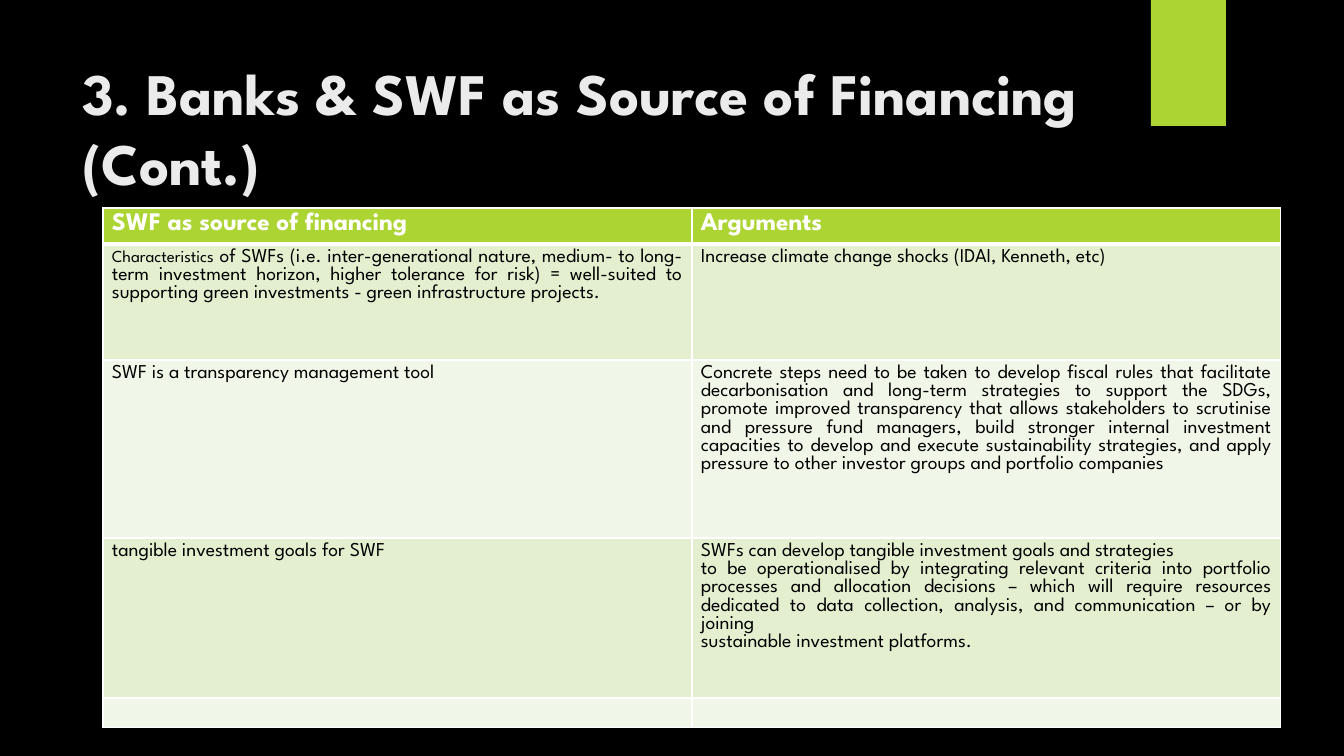
from pptx import Presentation
from pptx.dml.color import RGBColor
from pptx.enum.shapes import MSO_SHAPE
from pptx.enum.text import MSO_ANCHOR, PP_ALIGN
from pptx.oxml.ns import qn
from pptx.util import Pt
from lxml import etree

RECTANGLE = MSO_SHAPE.RECTANGLE
MIDDLE, TOP = MSO_ANCHOR.MIDDLE, MSO_ANCHOR.TOP
LEFT, JUSTIFY = PP_ALIGN.LEFT, PP_ALIGN.JUSTIFY

WIDTH, HEIGHT = 1344, 756
EMU_PER_PX = 12192000 / WIDTH
FONT = "League Spartan"
BLACK, WHITE, OFF_WHITE = "000000", "FFFFFF", "EBEBEB"
LIME, PALE_LIME, FAINT_LIME = "ACD433", "E3EFCE", "F1F7E8"

TITLE = "3. Banks & SWF as Source of Financing (Cont.)"
HEADINGS = ["SWF as source of financing", "Arguments"]
CHARACTERISTICS = [
    ("Characteristics", 12),
    (" of SWFs (i.e. inter-generational nature, medium- to long-term investment horizon, "
     "higher tolerance for risk) = well-suited to supporting green investments - "
     "green infrastructure projects.", 14),
]
ARGUMENTS = [
    [[CHARACTERISTICS], ["Increase climate change shocks (IDAI, Kenneth, etc)"]],
    [["SWF is a transparency management tool"],
     ["Concrete steps need to be taken to develop fiscal rules that facilitate decarbonisation "
      "and long-term strategies to support the SDGs, promote improved transparency that allows "
      "stakeholders to scrutinise and pressure fund managers, build stronger internal investment "
      "capacities to develop and execute sustainability strategies, and apply pressure to other "
      "investor groups and portfolio companies"]],
    [["tangible investment goals for SWF"],
     ["SWFs can develop tangible investment goals and strategies",
      "to be operationalised by integrating relevant criteria into portfolio processes and "
      "allocation decisions – which will require resources dedicated to data collection, "
      "analysis, and communication – or by joining",
      "sustainable investment platforms."]],
    [[], []],
]
ROW_HEIGHTS = [36, 116, 178, 160, 30]


def px(length):
    return round(length * EMU_PER_PX)


def rgb(color):
    return RGBColor.from_string(color)


def write(frame, paragraphs, size=14, color=BLACK, bold=False, align=LEFT):
    for index, content in enumerate(paragraphs):
        paragraph = frame.paragraphs[0] if index == 0 else frame.add_paragraph()
        paragraph.alignment = align
        pieces = [(content, size)] if isinstance(content, str) else content
        for words, points in pieces:
            run = paragraph.add_run()
            run.text = words
            run.font.name = FONT
            run.font.size = Pt(points)
            run.font.bold = bold
            run.font.color.rgb = rgb(color)
    if not paragraphs:
        ending = etree.SubElement(frame.paragraphs[0]._p, qn("a:endParaRPr"), sz=str(size * 100))
        etree.SubElement(ending, qn("a:latin"), typeface=FONT)


def place(part, left, top, width, height):
    part.left, part.top, part.width, part.height = map(px, (left, top, width, height))


def add_borders(cell, widths):
    properties = cell._tc.get_or_add_tcPr()
    for position, (side, points) in enumerate(widths.items()):
        line = etree.Element(qn(f"a:ln{side}"), w=str(Pt(points)))
        fill = etree.SubElement(line, qn("a:solidFill"))
        etree.SubElement(fill, qn("a:srgbClr"), val=WHITE)
        properties.insert(position, line)


def format_cell(cell, color, top_border=1, bottom_border=1):
    cell.fill.solid()
    cell.fill.fore_color.rgb = rgb(color)
    cell.vertical_anchor = TOP
    cell.margin_left = cell.margin_right = px(9)
    cell.margin_top = cell.margin_bottom = px(5)
    add_borders(cell, {"L": 1, "R": 1, "T": top_border, "B": bottom_border})


def add_accent(slide, left, top, width, height):
    accent = slide.shapes.add_shape(RECTANGLE, *map(px, (left, top, width, height)))
    accent.shadow.inherit = False
    accent.fill.solid()
    accent.fill.fore_color.rgb = rgb(LIME)
    accent.line.fill.background()


def add_title(slide, left, top, width, height):
    title = slide.shapes.title
    place(title, left, top, width, height)
    title.text_frame.word_wrap = True
    title.text_frame.vertical_anchor = MIDDLE
    write(title.text_frame, [TITLE], size=42, color=OFF_WHITE, bold=True)


def add_arguments(slide, left, top, width):
    box = map(px, (left, top, width, sum(ROW_HEIGHTS)))
    table = slide.shapes.add_table(len(ROW_HEIGHTS), len(HEADINGS), *box).table
    for column in table.columns:
        column.width = px(width / len(HEADINGS))
    for row, height in zip(table.rows, ROW_HEIGHTS):
        row.height = px(height)
    for column, heading in enumerate(HEADINGS):
        cell = table.cell(0, column)
        format_cell(cell, LIME, bottom_border=3)
        write(cell.text_frame, [heading], size=18, color=WHITE, bold=True)
    for row, arguments in enumerate(ARGUMENTS, 1):
        for column, paragraphs in enumerate(arguments):
            cell = table.cell(row, column)
            format_cell(cell, PALE_LIME if row % 2 else FAINT_LIME, top_border=3 if row == 1 else 1)
            write(cell.text_frame, paragraphs, align=JUSTIFY)


def main():
    deck = Presentation()
    deck.slide_width, deck.slide_height = px(WIDTH), px(HEIGHT)
    slide = deck.slides.add_slide(deck.slide_layouts[5])
    slide.background.fill.solid()
    slide.background.fill.fore_color.rgb = rgb(BLACK)
    add_accent(slide, 1151, 0, 75, 126)
    add_title(slide, 72, 50, 1037, 154)
    add_arguments(slide, 103, 208, 1178)
    deck.save("out.pptx")


if __name__ == "__main__":
    main()
